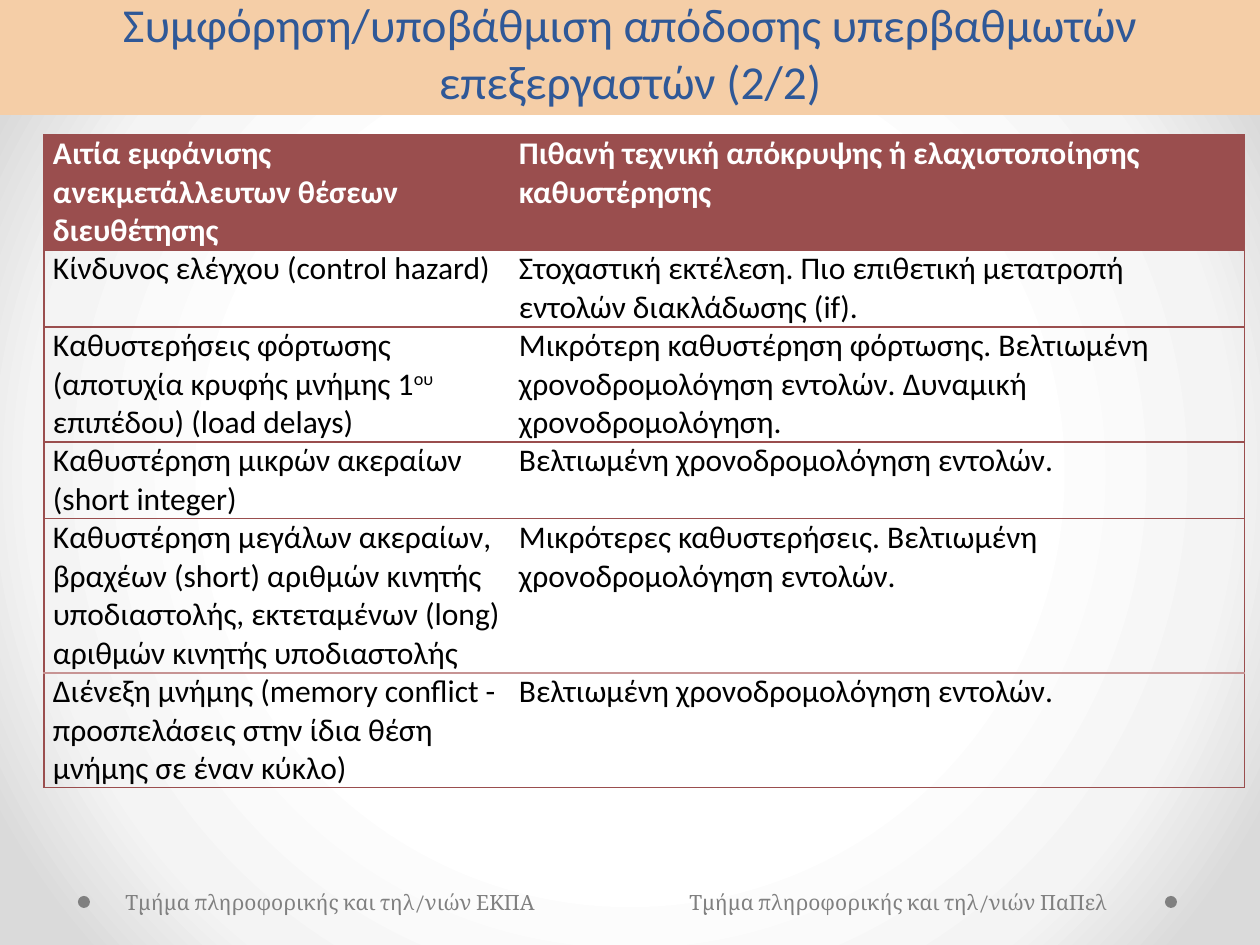
from dataclasses import dataclass
from lxml import etree
from pptx import Presentation
from pptx.dml.color import RGBColor
from pptx.enum import shapes, text
from pptx.oxml import ns
from pptx.util import Emu, Pt

PX = 914400 / 126
GREY, RED, PINK = "808080", "9A4E4E", "C79494"


@dataclass
class Footer:
    label: str
    left: int
    width: int
    dot_left: int


@dataclass
class Row:
    height: int
    cause: str
    remedy: str
    line: str = RED
    line_pt: float = 0.75


FOOTERS = [
    Footer("Τμήμα πληροφορικής και τηλ/νιών ΕΚΠΑ", 113, 496, 78),
    Footer("Τμήμα πληροφορικής και τηλ/νιών ΠαΠελ", 677, 451, 1165),
]
COLUMNS = [466, 735]
ROWS = [
    Row(115, "Αιτία εμφάνισης ανεκμετάλλευτων θέσεων διευθέτησης",
        "Πιθανή τεχνική απόκρυψης ή ελαχιστοποίησης καθυστέρησης"),
    Row(77, "Κίνδυνος ελέγχου (control hazard)",
        "Στοχαστική εκτέλεση. Πιο επιθετική μετατροπή εντολών διακλάδωσης (if)."),
    Row(115, "Καθυστερήσεις φόρτωσης (αποτυχία κρυφής μνήμης 1^ου^ επιπέδου) (load delays)",
        "Μικρότερη καθυστέρηση φόρτωσης. Βελτιωμένη χρονοδρομολόγηση εντολών. "
        "Δυναμική χρονοδρομολόγηση."),
    Row(77, "Καθυστέρηση μικρών ακεραίων (short integer)",
        "Βελτιωμένη χρονοδρομολόγηση εντολών."),
    Row(154, "Καθυστέρηση μεγάλων ακεραίων, βραχέων (short) αριθμών κινητής υποδιαστολής, "
        "εκτεταμένων (long) αριθμών κινητής υποδιαστολής",
        "Μικρότερες καθυστερήσεις. Βελτιωμένη χρονοδρομολόγηση εντολών.", PINK, 1),
    Row(115, "Διένεξη μνήμης (memory conflict - προσπελάσεις στην ίδια θέση μνήμης "
        "σε έναν κύκλο)",
        "Βελτιωμένη χρονοδρομολόγηση εντολών."),
]


def px(n: int) -> Emu:
    return Emu(round(n * PX))


def box(*lengths: int) -> list[Emu]:
    return [px(n) for n in lengths]


def rgb(color: str) -> RGBColor:
    return RGBColor.from_string(color)


def style(r, size: float, face: str, color: str, bold: bool = False) -> None:
    r.font.size = Pt(size)
    r.font.name = face
    r.font.bold = bold
    r.font.color.rgb = rgb(color)


def paint(fill, color: str) -> None:
    fill.solid()
    fill.fore_color.rgb = rgb(color)


def draw_background(s) -> None:
    s.background.fill.gradient()
    grad = next(s._element.iter(ns.qn("a:gradFill")))
    for child in list(grad):
        grad.remove(child)
    stops = etree.SubElement(grad, ns.qn("a:gsLst"))
    for pos, color in ((50, "FFFFFF"), (76, "F4F4F4"), (92, "DADADA")):
        stop = etree.SubElement(stops, ns.qn("a:gs"), pos=str(pos * 1000))
        etree.SubElement(stop, ns.qn("a:srgbClr"), val=color)
    radial = etree.SubElement(grad, ns.qn("a:path"), path="circle")
    etree.SubElement(radial, ns.qn("a:fillToRect"), l="50000", t="50000", r="50000", b="50000")


def draw_footer(s, footer: Footer) -> None:
    dot = s.shapes.add_shape(shapes.MSO_SHAPE.OVAL, *box(footer.dot_left, 896, 12, 12))
    dot.shadow.inherit = False
    paint(dot.fill, GREY)
    dot.line.fill.background()
    tf = s.shapes.add_textbox(*box(footer.left, 883, footer.width, 38)).text_frame
    tf.word_wrap = True
    tf.text = footer.label
    style(tf.paragraphs[0].runs[0], 12, "Cambria", GREY)


def draw_title(s, label: str) -> None:
    sp = s.shapes.title
    sp.left, sp.top, sp.width, sp.height = box(0, 0, 1260, 115)
    paint(sp.fill, "F5CEA7")
    tf = sp.text_frame
    tf.text = label
    tf.auto_size = text.MSO_AUTO_SIZE.NONE
    tf.vertical_anchor = text.MSO_ANCHOR.BOTTOM
    p = tf.paragraphs[0]
    p.alignment = text.PP_ALIGN.CENTER
    style(p.runs[0], 27, "Calibri", "2F5897")


def set_border(cell, side: str, color: str | None, width: float = 0.75) -> None:
    ln = etree.SubElement(cell._tc.get_or_add_tcPr(), ns.qn(f"a:ln{side}"), w=str(Pt(width)))
    if color is None:
        etree.SubElement(ln, ns.qn("a:noFill"))
    else:
        fill = etree.SubElement(ln, ns.qn("a:solidFill"))
        etree.SubElement(fill, ns.qn("a:srgbClr"), val=color)


def fill_cell(cell, label: str, header: bool) -> None:
    cell.margin_left = cell.margin_right = px(9)
    cell.margin_top = cell.margin_bottom = 0
    p = cell.text_frame.paragraphs[0]
    for i, part in enumerate(label.split("^")):
        r = p.add_run()
        r.text = part
        style(r, 18, "Calibri", "FFFFFF" if header else "000000", header)
        if i % 2:
            r._r.get_or_add_rPr().set("baseline", "30000")
    if header:
        paint(cell.fill, RED)
    else:
        cell.fill.background()


def draw_table(s, rows: list[Row]) -> None:
    height = sum(row.height for row in rows)
    frame = s.shapes.add_table(len(rows), len(COLUMNS), *box(44, 135, sum(COLUMNS), height))
    table = frame.table
    table.first_row = table.horz_banding = False
    for column, width in zip(table.columns, COLUMNS):
        column.width = px(width)
    for i, row in enumerate(rows):
        table.rows[i].height = px(row.height)
        above = rows[max(i - 1, 0)]
        for j, label in enumerate((row.cause, row.remedy)):
            cell = table.cell(i, j)
            set_border(cell, "L", RED if j == 0 else None)
            set_border(cell, "R", RED if j == 1 else None)
            set_border(cell, "T", above.line, above.line_pt)
            set_border(cell, "B", row.line, row.line_pt)
            fill_cell(cell, label, i == 0)


def main() -> None:
    prs = Presentation()
    prs.slide_width, prs.slide_height = box(1260, 945)
    s = prs.slides.add_slide(prs.slide_layouts[5])
    draw_background(s)
    for footer in FOOTERS:
        draw_footer(s, footer)
    draw_title(s, "Συμφόρηση/υποβάθμιση απόδοσης υπερβαθμωτών επεξεργαστών (2/2)")
    draw_table(s, ROWS)
    prs.save("out.pptx")


if __name__ == "__main__":
    main()
